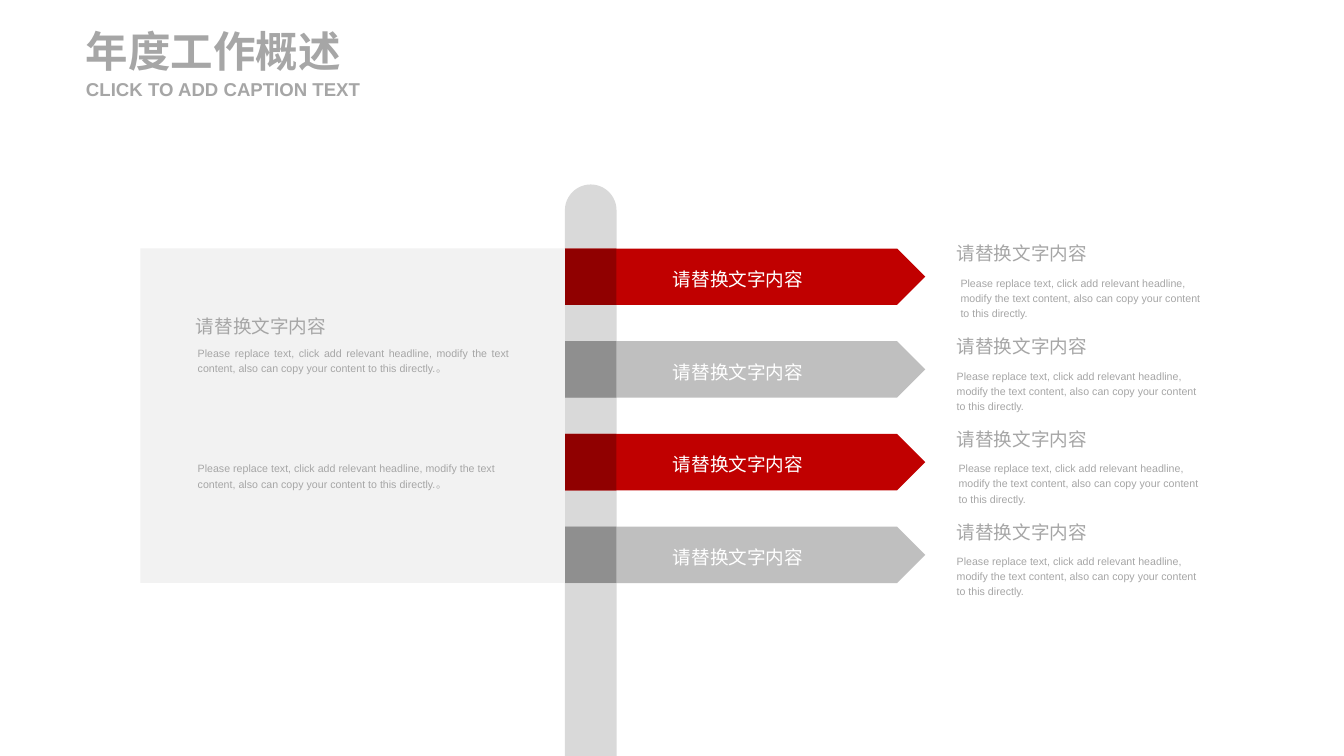
from pptx import Presentation
from pptx.dml.color import RGBColor
from pptx.enum.shapes import MSO_SHAPE as SHAPE
from pptx.enum.text import MSO_ANCHOR as ANCHOR, MSO_AUTO_SIZE as AUTO, PP_ALIGN as ALIGN
from pptx.util import Emu, Pt

PX = 9144  # 100 px to the inch
FONT = "Arial"
WHITE = RGBColor(0xFF, 0xFF, 0xFF)
RED = RGBColor(0xC0, 0x00, 0x00)
DARK_RED = RGBColor(0x90, 0x00, 0x00)
SILVER = RGBColor(0xBF, 0xBF, 0xBF)
DARK_SILVER = RGBColor(0x8F, 0x8F, 0x8F)
POST_GRAY = RGBColor(0xD9, 0xD9, 0xD9)
PANEL_GRAY = RGBColor(0xF2, 0xF2, 0xF2)
TEXT_GRAY = RGBColor(0xA6, 0xA6, 0xA6)

HEADING = "请替换文字内容"
BODY = ("Please replace text, click add relevant headline, modify the text "
        "content, also can copy your content to this directly.")

POST_X, POST_W = 591, 54
ROW_TOP, ROW_PITCH, ROW_H = 260, 97, 59
ARROW_W = 377
NOTE_X = 991
# arrow fill, fold fill, left edge of the note body
ROWS = [
    (RED, DARK_RED, 995),
    (SILVER, DARK_SILVER, 991),
    (RED, DARK_RED, 993),
    (SILVER, DARK_SILVER, 991),
]


def px(*lengths):
    return [Emu(n * PX) for n in lengths]


def write(tf, text, size, color, align=ALIGN.LEFT, bold=False, spacing=1.2):
    p = tf.paragraphs[0]
    p.text = text
    p.alignment = align
    p.line_spacing = spacing
    font = p.runs[0].font
    font.name, font.size, font.bold = FONT, Pt(size), bold
    font.color.rgb = color


def add_block(s, kind, box, color):
    sp = s.shapes.add_shape(kind, *px(*box))
    sp.shadow.inherit = False
    sp.fill.solid()
    sp.fill.fore_color.rgb = color
    sp.line.fill.background()
    return sp


def add_text(s, box, text, size, wrap=True, align=ALIGN.LEFT):
    tf = s.shapes.add_textbox(*px(*box)).text_frame
    tf.word_wrap = wrap
    tf.auto_size = AUTO.SHAPE_TO_FIT_TEXT
    write(tf, text, size, TEXT_GRAY, align)


def add_title(s, box, text, size):
    """Bold line without insets, centred on its box's height."""
    tf = s.shapes.add_textbox(*px(*box)).text_frame
    tf.word_wrap = True
    tf.auto_size = AUTO.SHAPE_TO_FIT_TEXT
    tf.vertical_anchor = ANCHOR.MIDDLE
    tf.margin_left = tf.margin_top = tf.margin_right = tf.margin_bottom = 0
    write(tf, text, size, TEXT_GRAY, bold=True, spacing=1.0)


def add_post(s):
    post = add_block(s, SHAPE.ROUND_2_SAME_RECTANGLE,
                     (POST_X, 193, POST_W, 598), POST_GRAY)
    post.adjustments[0] = 0.5
    post.adjustments[1] = 0


def add_row(s, top, color, fold_color, body_x):
    """Signpost arrow with its fold, and the note to its right."""
    arrow = add_block(s, SHAPE.PENTAGON, (POST_X, top, ARROW_W, ROW_H), color)
    arrow.text_frame.vertical_anchor = ANCHOR.MIDDLE
    write(arrow.text_frame, HEADING, 14, WHITE, ALIGN.CENTER)
    add_block(s, SHAPE.RECTANGLE, (POST_X, top, POST_W, ROW_H), fold_color)
    add_text(s, (NOTE_X, top - 16, 158, 36), HEADING, 14, wrap=False)
    add_text(s, (body_x, top + 22, 273, 57), BODY, 8)


def add_panel(s):
    add_block(s, SHAPE.RECTANGLE, (147, ROW_TOP, POST_X - 147, 350), PANEL_GRAY)
    add_text(s, (195, 320, 168, 36), HEADING, 14)
    for top, align in ((355, ALIGN.JUSTIFY), (476, ALIGN.LEFT)):
        add_text(s, (197, top, 346, 41), BODY + "。", 8, align=align)


def main():
    prs = Presentation()
    prs.slide_width, prs.slide_height = px(1406, 791)
    s = prs.slides.add_slide(prs.slide_layouts[6])
    add_post(s)
    for i, (color, fold_color, body_x) in enumerate(ROWS):
        add_row(s, ROW_TOP + i * ROW_PITCH, color, fold_color, body_x)
    add_panel(s)
    add_title(s, (90, 26, 307, 54), "年度工作概述", 32)
    add_title(s, (90, 81, 307, 24), "CLICK TO ADD CAPTION TEXT", 14)
    prs.save("out.pptx")


if __name__ == "__main__":
    main()
